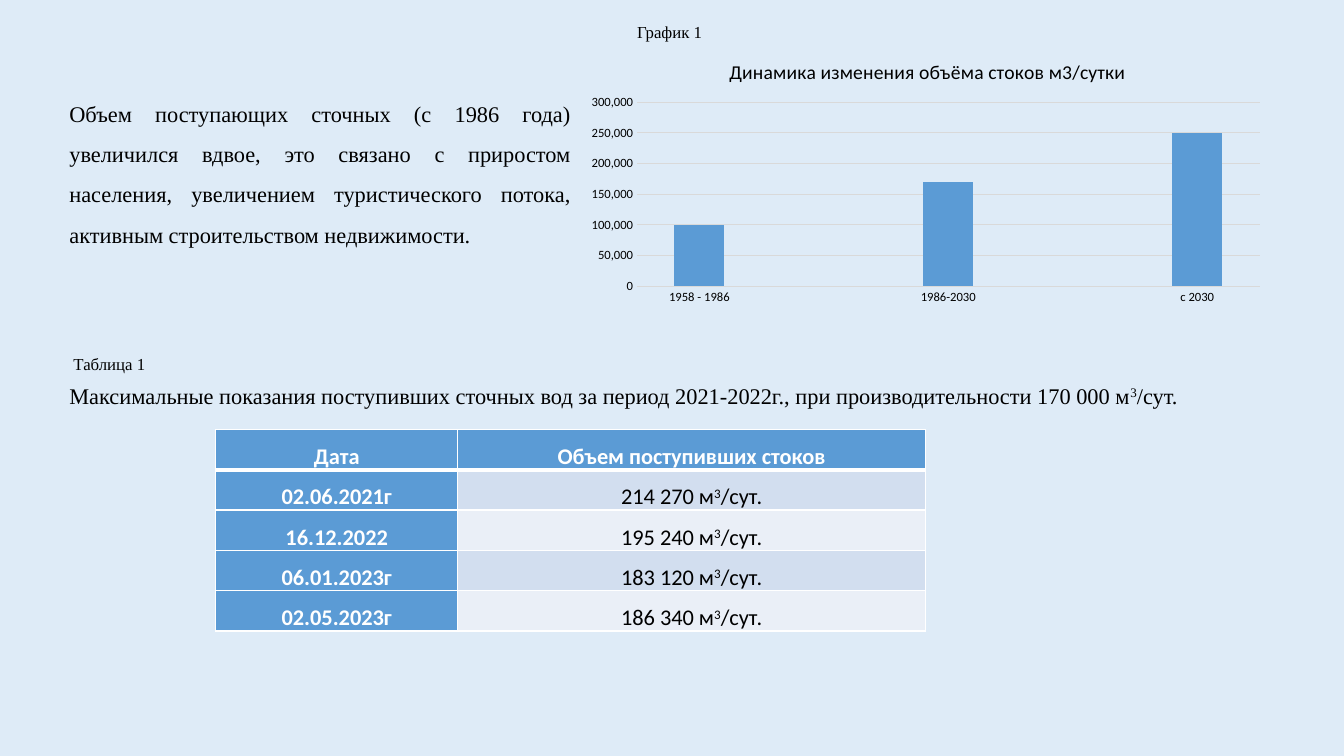
import pptx
import pptx.chart.data
import pptx.dml.color
import pptx.enum.chart
import pptx.enum.text
import pptx.oxml
import pptx.oxml.ns
import pptx.util

Inches = pptx.util.Inches
Pt = pptx.util.Pt
ALIGN = pptx.enum.text.PP_ALIGN
SERIF = "Times New Roman"
SANS = "Calibri"
BLUE = "5B9BD5"
BLACK = "000000"
WHITE = "FFFFFF"
BANDS = ["D2DEEF", "EAEFF7"]
CUBIC_PER_DAY = [("3", True), ("/сут.", False)]
PERIODS = [("1958 - 1986", 100000), ("", None), ("1986-2030", 170000), ("", None), ("с 2030", 250000)]
READINGS = [
    ("02.06.2021г", "214 270 м"),
    ("16.12.2022", "195 240 м"),
    ("06.01.2023г", "183 120 м"),
    ("02.05.2023г", "186 340 м"),
]


def color(value):
    """Turn a hex string into a colour."""
    return pptx.dml.color.RGBColor.from_string(value)


def style_font(font, size, name=SANS, fill=BLACK, bold=False):
    """Set the size, typeface, colour and weight of a font."""
    font.size = Pt(size)
    font.name = name
    font.bold = bold
    font.color.rgb = color(fill)


def write_runs(paragraph, runs, size, name, fill=BLACK, bold=False):
    """Add (text, raised) runs to a paragraph."""
    for text, raised in runs:
        run = paragraph.add_run()
        run.text = text
        style_font(run.font, size, name, fill, bold)
        if raised:
            run.font._element.set("baseline", "30000")


def add_text(slide, box, runs, size, align=ALIGN.LEFT, spacing=1.0, wrap=True):
    """Place a serif text box."""
    frame = slide.shapes.add_textbox(*map(Inches, box)).text_frame
    frame.word_wrap = wrap
    paragraph = frame.paragraphs[0]
    paragraph.alignment = align
    paragraph.line_spacing = spacing
    write_runs(paragraph, runs, size, SERIF)


def place_plot(chart, x, y, width, height):
    """Fix the inner plot area as fractions of the chart."""
    plot_area = chart._chartSpace.chart.plotArea
    for layout in plot_area.findall(pptx.oxml.ns.qn("c:layout")):
        plot_area.remove(layout)
    fractions = "".join(
        f'<c:{tag} val="{value}"/>' for tag, value in zip("xywh", (x, y, width, height)))
    plot_area.insert(0, pptx.oxml.parse_xml(
        f'<c:layout {pptx.oxml.ns.nsdecls("c")}><c:manualLayout>'
        '<c:layoutTarget val="inner"/><c:xMode val="edge"/><c:yMode val="edge"/>'
        f'{fractions}</c:manualLayout></c:layout>'))


def add_flow_chart(slide, box):
    """Draw the column chart of sewage volume by period."""
    flow = pptx.chart.data.CategoryChartData(number_format="#,##0")
    flow.categories = [period for period, _ in PERIODS]
    flow.add_series("Series 1", [volume for _, volume in PERIODS])
    chart = slide.shapes.add_chart(
        pptx.enum.chart.XL_CHART_TYPE.COLUMN_CLUSTERED, *map(Inches, box), flow).chart
    style_font(chart.font, 10)
    chart.has_legend = False
    chart.has_title = True
    write_runs(chart.chart_title.text_frame.paragraphs[0],
               [("Динамика изменения объёма стоков м3/сутки", False)], 14, SANS)
    chart.chart_title.include_in_layout = False
    place_plot(chart, 0.08, 0.22, 0.9, 0.7)

    plot = chart.plots[0]
    plot.gap_width = 150
    plot.vary_by_categories = False
    columns = plot.series[0].format.fill
    columns.solid()
    columns.fore_color.rgb = color(BLUE)
    for axis in (chart.category_axis, chart.value_axis):
        style_font(axis.tick_labels.font, 9)
        axis.major_tick_mark = pptx.enum.chart.XL_TICK_MARK.NONE
        axis.minor_tick_mark = pptx.enum.chart.XL_TICK_MARK.NONE
        axis.format.line.fill.background()
    volume_axis = chart.value_axis
    volume_axis.minimum_scale = 0
    volume_axis.maximum_scale = 300000
    volume_axis.major_unit = 50000
    volume_axis.tick_labels.number_format = "#,##0"
    volume_axis.tick_labels.number_format_is_linked = False
    grid = volume_axis.major_gridlines.format.line
    grid.color.rgb = color("D9D9D9")
    grid.width = Pt(0.75)


def fill_cell(cell, runs, fill, ink, bold, bottom_width):
    """Write, fill and border one table cell."""
    cell.margin_left = cell.margin_right = Inches(0.07)
    cell.margin_top = cell.margin_bottom = 0
    paragraph = cell.text_frame.paragraphs[0]
    paragraph.alignment = ALIGN.CENTER
    paragraph.line_spacing = 1.5
    write_runs(paragraph, runs, 16, SANS, ink, bold)
    properties = cell._tc.get_or_add_tcPr()
    for side, width in (("L", 1), ("R", 1), ("T", 1), ("B", bottom_width)):
        properties.append(pptx.oxml.parse_xml(
            f'<a:ln{side} {pptx.oxml.ns.nsdecls("a")} w="{Pt(width)}"><a:solidFill>'
            f'<a:srgbClr val="{WHITE}"/></a:solidFill></a:ln{side}>'))
    cell.fill.solid()
    cell.fill.fore_color.rgb = color(fill)


def add_readings_table(slide, box):
    """Draw the table of peak readings."""
    row_count = len(READINGS) + 1
    table = slide.shapes.add_table(row_count, 2, *map(Inches, box)).table
    date_width = 2.4
    table.columns[0].width = Inches(date_width)
    table.columns[1].width = Inches(box[2] - date_width)
    for row in table.rows:
        row.height = Inches(box[3] / row_count)
    for column, heading in enumerate(("Дата", "Объем поступивших стоков")):
        fill_cell(table.cell(0, column), [(heading, False)], BLUE, WHITE, True, 3)
    for index, (date, volume) in enumerate(READINGS):
        fill_cell(table.cell(index + 1, 0), [(date, False)], BLUE, WHITE, True, 1)
        fill_cell(table.cell(index + 1, 1), [(volume, False)] + CUBIC_PER_DAY,
                  BANDS[index % 2], BLACK, False, 1)


def build_slide(deck):
    """Compose the slide on sewage volumes."""
    slide = deck.slides.add_slide(deck.slide_layouts[6])
    slide.background.fill.solid()
    slide.background.fill.fore_color.rgb = color("DEEBF7")
    add_flow_chart(slide, (5.77, 0.44, 6.86, 2.61))
    add_text(slide, (0.59, 0.81, 5.17, 1.72), [(
        "Объем поступающих сточных (с 1986 года) увеличился вдвое, это связано с приростом "
        "населения, увеличением туристического потока, активным строительством недвижимости.",
        False)], 16, ALIGN.JUSTIFY, 1.5)
    add_readings_table(slide, (2.14, 4.26, 7.04, 2))
    add_text(slide, (0.59, 3.61, 11.77, 0.78), [(
        "Максимальные показания поступивших сточных вод за период 2021-2022г., "
        "при производительности 170 000 м", False)] + CUBIC_PER_DAY, 16, ALIGN.JUSTIFY, 1.5)
    add_text(slide, (6.22, 0.17, 0.86, 0.3), [("График 1", False)], 12, wrap=False)
    add_text(slide, (0.63, 3.46, 0.92, 0.3), [("Таблица 1", False)], 12, wrap=False)


def main():
    """Create and save the deck."""
    deck = pptx.Presentation()
    deck.slide_width = Inches(13.33)
    deck.slide_height = Inches(7.5)
    build_slide(deck)
    deck.save("out.pptx")


if __name__ == "__main__":
    main()
